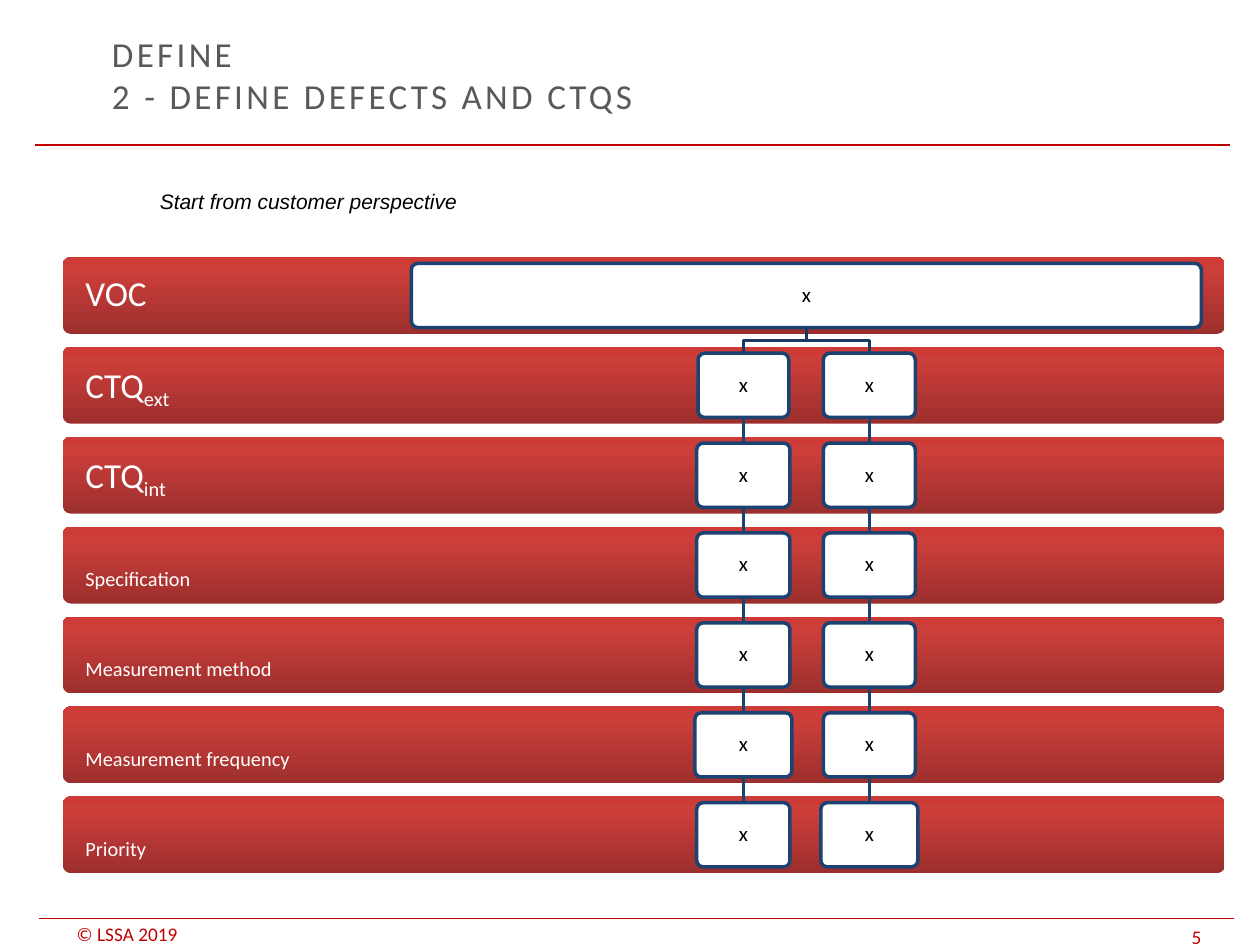
"""Build the slide that breaks the voice of the customer down into CTQs."""
import copy

import pptx
import pptx.dml.color
import pptx.enum.shapes
import pptx.enum.text
import pptx.oxml.ns
import pptx.util
from pptx.util import Inches

COLORS = {
    "accent": "C00000", "title": "595959", "black": "000000", "white": "FFFFFF",
    "band_dark": "9C2F2D", "band_mid": "CB3E3A", "band_light": "CE3B37",
    "box_line": "1C4271", "elbow": "193A64",
}
RGB = {k: pptx.dml.color.RGBColor.from_string(v) for k, v in COLORS.items()}
ROUNDED = pptx.enum.shapes.MSO_SHAPE.ROUNDED_RECTANGLE
ALIGN = pptx.enum.text.PP_ALIGN
ANCHOR = pptx.enum.text.MSO_ANCHOR


def write(sp, text, size, color, anchor, inset=(0.1, 0.05), font="Calibri", align=ALIGN.LEFT, wrap=True):
    tf = sp.text_frame
    tf.word_wrap = wrap
    tf.vertical_anchor = anchor
    tf.margin_left = tf.margin_right = Inches(inset[0])
    tf.margin_top = tf.margin_bottom = Inches(inset[1])
    p = tf.paragraphs[0]
    p.text = text
    p.alignment = align
    p.font.size = pptx.util.Pt(size)
    p.font.name = font
    p.font.color.rgb = RGB[color]
    return p


def connect(x1, y1, x2, y2, color, width):
    cx = s.shapes.add_connector(pptx.enum.shapes.MSO_CONNECTOR.STRAIGHT,
                                Inches(x1), Inches(y1), Inches(x2), Inches(y2))
    cx.line.color.rgb = RGB[color]
    cx.line.width = pptx.util.Pt(width)
    cx._element.spPr.append(pptx.oxml.parse_xml("<a:effectLst %s/>" % pptx.oxml.ns.nsdecls("a")))


prs = pptx.Presentation()
prs.slide_width, prs.slide_height = Inches(10), Inches(7.5)
s = prs.slides.add_slide(prs.slide_layouts[6])

for text, x, y, w, h in [("© LSSA 2019", 0.51, 7.32, 1.42, 0.18), ("5", 9.36, 7.31, 0.64, 0.22)]:
    sp = s.shapes.add_textbox(Inches(x), Inches(y), Inches(w), Inches(h))
    write(sp, text, 11, "accent", ANCHOR.BOTTOM, (0.1, 0), wrap=False)
connect(0.28, 1.15, 9.76, 1.15, "accent", 0.75)
connect(0.31, 7.29, 9.79, 7.29, "accent", 0.75)

sp = s.shapes.add_textbox(Inches(0.79), Inches(0.26), Inches(7.09), Inches(0.66))
p = write(sp, "DEFINE\v2 - DEFINE DEFECTS AND CTQS", 20, "title", ANCHOR.MIDDLE)
for r in p.runs:
    r.font._element.set("spc", "190")

sp = s.shapes.add_textbox(Inches(1.17), Inches(1.45), Inches(2.83), Inches(0.3))
p = write(sp, "Start from customer perspective", 12, "black", ANCHOR.TOP, font="Arial")
p.font.italic = True

LABELS = [("VOC", ""), ("CTQ", "ext"), ("CTQ", "int"), ("", "Specification"),
          ("", "Measurement method"), ("", "Measurement frequency"), ("", "Priority")]
TOP, PITCH, BAND_H, BOX_H, BOX_INSET = 2.04, 4.28 / 6, 0.61, 0.51, 0.05

for i, (base, subscript) in enumerate(LABELS):
    sp = s.shapes.add_shape(ROUNDED, Inches(0.5), Inches(TOP + i * PITCH), Inches(9.22), Inches(BAND_H))
    sp.adjustments[0] = 0.1
    sp.shadow.inherit = False
    sp.line.fill.background()
    sp.fill.gradient()
    sp.fill.gradient_angle = 90
    stops = sp._element.spPr.find(".//" + pptx.oxml.ns.qn("a:gsLst"))
    stops.append(copy.deepcopy(stops[-1]))
    for stop, (pos, color) in zip(sp.fill.gradient_stops,
                                  [(0, "band_dark"), (0.8, "band_mid"), (1, "band_light")]):
        stop.position = pos
        stop.color.rgb = RGB[color]
    p = write(sp, base, 20, "white", ANCHOR.MIDDLE, (0.16, 0.16))
    p.line_spacing = 0.9
    if subscript:
        r = p.add_run()
        r.text = subscript
        r.font._element.set("baseline", "-25000")

ROOT_X = 6.4
boxes = [(ROOT_X, 0, 6.27)]
for x, widths in [(5.9, [0.72, 0.74, 0.74, 0.74, 0.77, 0.74]), (6.9, [0.73] * 5 + [0.77])]:
    boxes += [(x, row, w) for row, w in enumerate(widths, 1)]

for x, row, w in boxes:
    y = TOP + BOX_INSET + row * PITCH
    above = y - PITCH + BOX_H
    if row == 1:
        mid = (above + y) / 2
        fb = s.shapes.build_freeform(Inches(ROOT_X), Inches(above))
        fb.add_line_segments([(Inches(px), Inches(py)) for px, py in [(ROOT_X, mid), (x, mid), (x, y)]],
                             close=False)
        sp = fb.convert_to_shape()
        sp.shadow.inherit = False
        sp.fill.background()
        sp.line.color.rgb = RGB["elbow"]
        sp.line.width = pptx.util.Pt(2)
    elif row > 1:
        connect(x, above, x, y, "box_line", 2)
    sp = s.shapes.add_shape(ROUNDED, Inches(x - w / 2), Inches(y), Inches(w), Inches(BOX_H))
    sp.adjustments[0] = 0.1
    sp.shadow.inherit = False
    sp.fill.solid()
    sp.fill.fore_color.rgb = RGB["white"]
    sp.line.color.rgb = RGB["box_line"]
    sp.line.width = pptx.util.Pt(2)
    p = write(sp, "x", 12, "black", ANCHOR.MIDDLE, (0.05, 0.05), align=ALIGN.CENTER)
    p.line_spacing = 0.9

prs.save("out.pptx")
